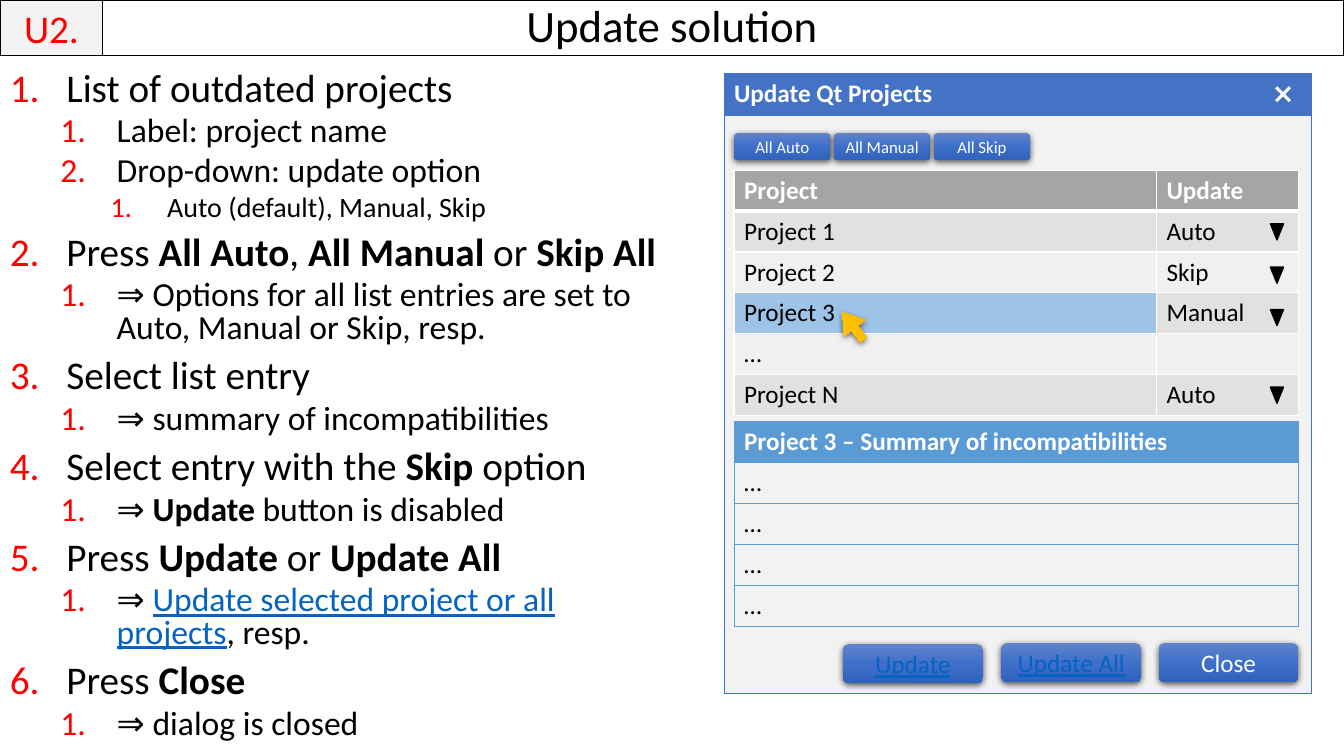
from lxml import etree
from pptx import Presentation, util as u
from pptx.dml.color import RGBColor
from pptx.enum import shapes, text
from pptx.oxml import parse_xml
from pptx.oxml.ns import qn

HUES = {"black": "000000", "white": "FFFFFF", "red": "FF0000", "link": "0563C1",
        "blue": "4472C4", "sky": "5B9BD5", "pale": "F2F2F2", "head": "A5A5A5",
        "odd": "E1E1E1", "even": "F0F0F0", "pick": "9DC3E6"}
NS = 'xmlns:a="http://schemas.openxmlformats.org/drawingml/2006/main"'
KINDS = shapes.MSO_SHAPE
MID = text.MSO_ANCHOR.MIDDLE


def write(para, words, size, hue="black", **form):
    run = para.add_run()
    run.text = words
    run.font.color.rgb = RGBColor.from_string(HUES[hue])
    for key, val in {"name": "Calibri", "size": u.Pt(size), **form}.items():
        setattr(run.font, key, val)


def draw(kind, box, fill=None, line=None, width=1, grad=None, turn=0):
    shape = slide.shapes.add_shape(kind, *map(u.Inches, box))
    shape.shadow.inherit = False
    shape.rotation = turn
    if line:
        shape.line.color.rgb = RGBColor.from_string(HUES[line])
        shape.line.width = u.Pt(width)
    else:
        shape.line.fill.background()
    if fill:
        shape.fill.solid()
        shape.fill.fore_color.rgb = RGBColor.from_string(HUES[fill])
    if grad:
        props = shape._element.spPr
        stops = "".join(f'<a:gs pos="{pos}"><a:srgbClr val="{hue}"/></a:gs>'
                        for pos, hue in zip((0, 50000, 100000), grad))
        props.insert(2, parse_xml(f'<a:gradFill {NS} rotWithShape="1"><a:gsLst>{stops}</a:gsLst>'
                                  '<a:lin ang="5400000" scaled="0"/></a:gradFill>'))
        props.find(qn("a:effectLst")).append(parse_xml(
            f'<a:outerShdw {NS} blurRad="57150" dist="19050" dir="5400000" algn="ctr" rotWithShape="0">'
            '<a:srgbClr val="000000"><a:alpha val="63000"/></a:srgbClr></a:outerShdw>'))
    return shape


deck = Presentation()
deck.slide_width, deck.slide_height = u.Inches(13.33), u.Inches(7.5)
slide = deck.slides.add_slide(deck.slide_layouts[5])

# Title bar and step tag
title = slide.shapes.title
for key, val in {"left": 0, "top": 0, "width": 13.33, "height": 0.55}.items():
    setattr(title, key, u.Inches(val))
title.line.color.rgb = RGBColor.from_string(HUES["black"])
title.line.width = u.Pt(0.75)
tag = draw(KINDS.RECTANGLE, (0, 0, 1.02, 0.55), "pale", "black", 0.75)
for shape, words, size, hue in ((title, "Update solution", 32, "black"), (tag, "U2.", 28, "red")):
    frame = shape.text_frame
    frame.auto_size = text.MSO_AUTO_SIZE.NONE
    frame.vertical_anchor = MID
    frame.paragraphs[0].alignment = text.PP_ALIGN.CENTER
    write(frame.paragraphs[0], words, size, hue)
title.text_frame.paragraphs[0].line_spacing = 0.9

# Numbered steps: level, then runs; * marks bold and _ marks a link
STEPS = [
    (0, ["List of outdated projects"]),
    (1, ["Label: project name"]),
    (1, ["Drop-down: update option"]),
    (2, ["Auto (default), Manual, Skip"]),
    (0, ["Press ", "*All Auto", ", ", "*All Manual", " or ", "*Skip All"]),
    (1, ["⇒ Options for all list entries are set to Auto, Manual or Skip, resp."]),
    (0, ["Select list entry"]),
    (1, ["⇒ summary of incompatibilities"]),
    (0, ["Select entry with the ", "*Skip ", "option"]),
    (1, ["⇒ ", "*Update ", "button is disabled"]),
    (0, ["Press ", "*Update", " or ", "*Update All"]),
    (1, ["⇒ ", "_Update selected project or all projects", ", resp."]),
    (0, ["Press ", "*Close"]),
    (1, ["⇒ dialog is closed"]),
]
body = slide.shapes.add_textbox(*map(u.Inches, (0, 0.67, 6.67, 6.84))).text_frame
body.word_wrap = True
for num, (level, runs) in enumerate(STEPS):
    para = body.add_paragraph() if num else body.paragraphs[0]
    para.level = level
    para.line_spacing = 0.8
    para.space_before = u.Pt(5 if level else 10)
    props = para._p.get_or_add_pPr()
    props.set("marL", str(u.Inches(0.56 + 0.5 * level)))
    props.set("indent", str(u.Inches(-0.56)))
    tint = etree.SubElement(props, qn("a:buClr"))
    etree.SubElement(tint, qn("a:srgbClr"), val=HUES["red"])
    etree.SubElement(props, qn("a:buFont"), typeface="+mj-lt")
    etree.SubElement(props, qn("a:buAutoNum"), type="arabicPeriod")
    for words in runs:
        link = words[0] == "_"
        write(para, words.lstrip("*_"), 28 - 4 * level, "link" if link else "black",
              bold=words[0] == "*", underline=link)

# Dialog window, project list and summary: each cell is (words, fill)
ROWS = [("Project 1", "Auto", "odd"), ("Project 2", "Skip", "even"),
        ("Project 3", "Manual", "odd"), ("…", "", "even"), ("Project N", "Auto", "odd")]
items = [[(name, "pick" if name == "Project 3" else fill), (mode, fill)]
         for name, mode, fill in ROWS]
TABLES = [
    ((7.18, 0.73), [5.83], [0.41, 5.74], "blue", 0.5,
     [[("Update Qt Projects", "blue")], [("", "pale")]]),
    ((7.28, 1.69), [4.19, 1.41], [2.43 / 6] * 6, "white", 1,
     [[("Project", "head"), ("Update", "head")]] + items),
    ((7.28, 4.18), [5.6], [2.03 / 5] * 5, "sky", 0.5,
     [[("Project 3 – Summary of incompatibilities", "sky")]] + [[("…", None)]] * 4),
]
for spot, cols, highs, edge, width, cells in TABLES:
    grid = slide.shapes.add_table(len(highs), len(cols), *map(
        u.Inches, (*spot, sum(cols), sum(highs)))).table
    grid.first_row = grid.horz_banding = False
    for col, size in zip(grid.columns, cols):
        col.width = u.Inches(size)
    for r, size in enumerate(highs):
        grid.rows[r].height = u.Inches(size)
        for c, (words, fill) in enumerate(cells[r]):
            cell = grid.cell(r, c)
            props = cell._tc.get_or_add_tcPr()
            for side in "LRTB":
                rule = (side == "B" and r == 0) or (side == "T" and r == 1)
                thick = 3 if rule and edge == "white" else width
                props.append(parse_xml(
                    f'<a:ln{side} {NS} w="{u.Pt(thick)}"><a:solidFill>'
                    f'<a:srgbClr val="{HUES[edge]}"/></a:solidFill></a:ln{side}>'))
            if fill:
                cell.fill.solid()
                cell.fill.fore_color.rgb = RGBColor.from_string(HUES[fill])
            else:
                cell.fill.background()
            if edge == "blue":
                cell.vertical_anchor = MID
            if words:
                write(cell.text_frame.paragraphs[0], words, 18,
                      "black" if r else "white", bold=r == 0)

# Drop-down marks and close cross
for top in (2.22, 2.65, 3.07, 3.84):
    draw(KINDS.ISOSCELES_TRIANGLE, (12.6, top, 0.13, 0.16), "black", "black", turn=180)
cross = draw(KINDS.CROSS, (12.62, 0.83, 0.21, 0.21), "white", "blue", turn=45)
cross.adjustments[0] = 0.389

# Buttons
BLUES = ("6183CB", "3E70CA", "3062BB")
small = [((7.28 + 0.99 * n, 1.32, 0.96, 0.27), words, 12, "white")
         for n, words in enumerate(("All Auto", "All Manual", "All Skip"))]
large = [((8.36, 6.39, 1.39, 0.39), "Update", 18, "link"),
         ((9.93, 6.38, 1.39, 0.39), "Update All", 18, "link"),
         ((11.49, 6.38, 1.39, 0.39), "Close", 18, "white")]
for box, words, size, hue in small + large:
    frame = draw(KINDS.ROUNDED_RECTANGLE, box, grad=BLUES).text_frame
    for key, val in {"margin_left": 0, "margin_right": 0, "margin_top": 0,
                     "margin_bottom": 0, "vertical_anchor": MID}.items():
        setattr(frame, key, val)
    frame.paragraphs[0].alignment = text.PP_ALIGN.CENTER
    write(frame.paragraphs[0], words, size, hue, underline=hue == "link")

# Mouse pointer
arrow = draw(KINDS.RIGHT_ARROW, (8.29, 3.1, 0.34, 0.27),
             grad=("FFC64B", "FFC000", "E3AB00"), turn=232.8)
arrow.adjustments[0], arrow.adjustments[1] = 0.303, 0.73

deck.save("out.pptx")
